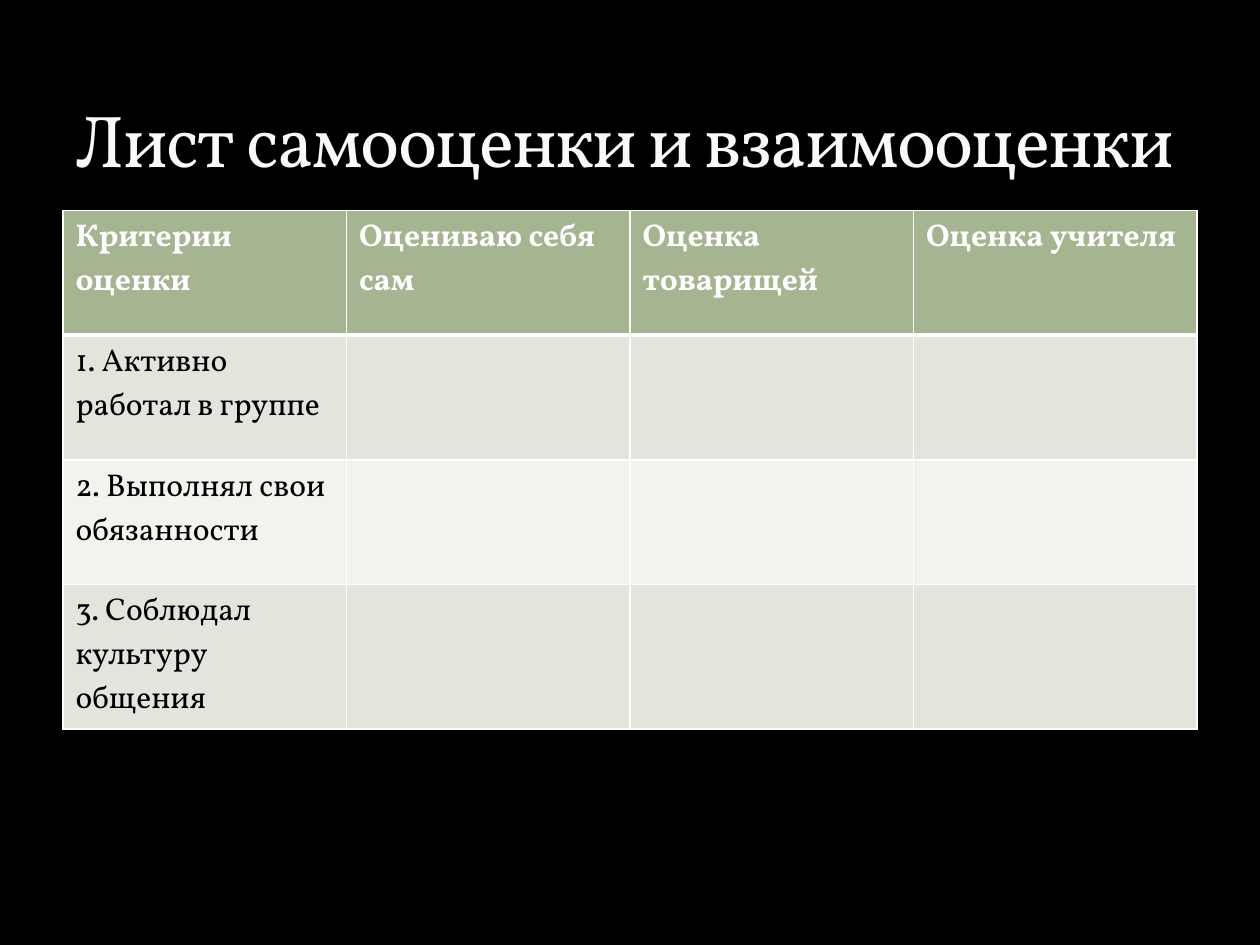
from lxml.etree import SubElement, fromstring
from pptx import Presentation
from pptx.dml.color import RGBColor
from pptx.enum.text import MSO_ANCHOR, MSO_AUTO_SIZE, PP_ALIGN
from pptx.oxml.ns import nsdecls, qn
from pptx.util import Inches, Pt

FONT = "Vollkorn"
BLACK = RGBColor(0x00, 0x00, 0x00)
WHITE = RGBColor(0xFF, 0xFF, 0xFF)
PALE = RGBColor(0xF9, 0xF9, 0xF9)
GREEN = RGBColor(0xA5, 0xB5, 0x92)
BANDS = [RGBColor(0xE1, 0xE5, 0xDC), RGBColor(0xF0, 0xF3, 0xEE)]

LEFT, WIDTH = 0.5, 9
TOP, ROW = 1.67, 0.99

HEADS = ["Критерии оценки", "Оцениваю себя сам", "Оценка товарищей", "Оценка учителя"]
GOALS = [
    "1. Активно работал в группе",
    "2. Выполнял свои обязанности",
    "3. Соблюдал культуру общения",
]


def put_text(frame, text, size=18, color=BLACK, bold=False):
    para = frame.paragraphs[0]
    para.alignment = PP_ALIGN.LEFT
    run = para.add_run()
    run.text = text
    font = run.font
    font.name, font.size, font.bold = FONT, Pt(size), bold
    font.color.rgb = color
    return run


def add_title(slide, text):
    title = slide.shapes.title
    title.left, title.top = Inches(LEFT), Inches(0.17)
    title.width, title.height = Inches(WIDTH), Inches(1.33)
    frame = title.text_frame
    frame.word_wrap = True
    frame.auto_size = MSO_AUTO_SIZE.NONE
    frame.vertical_anchor = MSO_ANCHOR.BOTTOM
    run = put_text(frame, text, size=42, color=PALE)
    # Tight letter spacing and a faint outline
    props = run.font._element
    props.set("spc", "-100")
    props.insert(0, fromstring(
        f'<a:ln {nsdecls("a")} w="3175"><a:solidFill><a:srgbClr val="3C4422">'
        '<a:alpha val="25000"/></a:srgbClr></a:solidFill></a:ln>'))


def set_edges(cell, base):
    props = cell._tc.get_or_add_tcPr()
    for side, width in (("L", 1), ("R", 1), ("T", 1), ("B", base)):
        line = SubElement(props, qn(f"a:ln{side}"), w=str(Pt(width)))
        fill = SubElement(line, qn("a:solidFill"))
        SubElement(fill, qn("a:srgbClr"), val=str(WHITE))


def add_grid(slide, rows):
    count, span = len(rows), len(rows[0])
    grid = slide.shapes.add_table(
        count, span, Inches(LEFT), Inches(TOP), Inches(WIDTH), Inches(ROW * count)
    ).table
    for r, row in enumerate(rows):
        head = r == 0
        for c, text in enumerate(row):
            cell = grid.cell(r, c)
            # Edges come before the fill in the cell's XML
            set_edges(cell, 3 if head else 1)
            cell.fill.solid()
            cell.fill.fore_color.rgb = GREEN if head else BANDS[(r - 1) % 2]
            if text:
                put_text(cell.text_frame, text, color=WHITE if head else BLACK, bold=head)
    # The header's thick rule is shared with the row below
    for c in range(span):
        grid.cell(1, c)._tc.tcPr.find(qn("a:lnT")).set("w", str(Pt(3)))


def main():
    deck = Presentation()
    deck.slide_width, deck.slide_height = Inches(10), Inches(7.5)
    slide = deck.slides.add_slide(deck.slide_layouts[5])
    back = slide.background.fill
    back.solid()
    back.fore_color.rgb = BLACK

    # Table of criteria with blank columns for marks
    blank = [""] * (len(HEADS) - 1)
    add_grid(slide, [HEADS] + [[goal] + blank for goal in GOALS])
    add_title(slide, "Лист самооценки и взаимооценки")
    deck.save("out.pptx")


if __name__ == "__main__":
    main()
